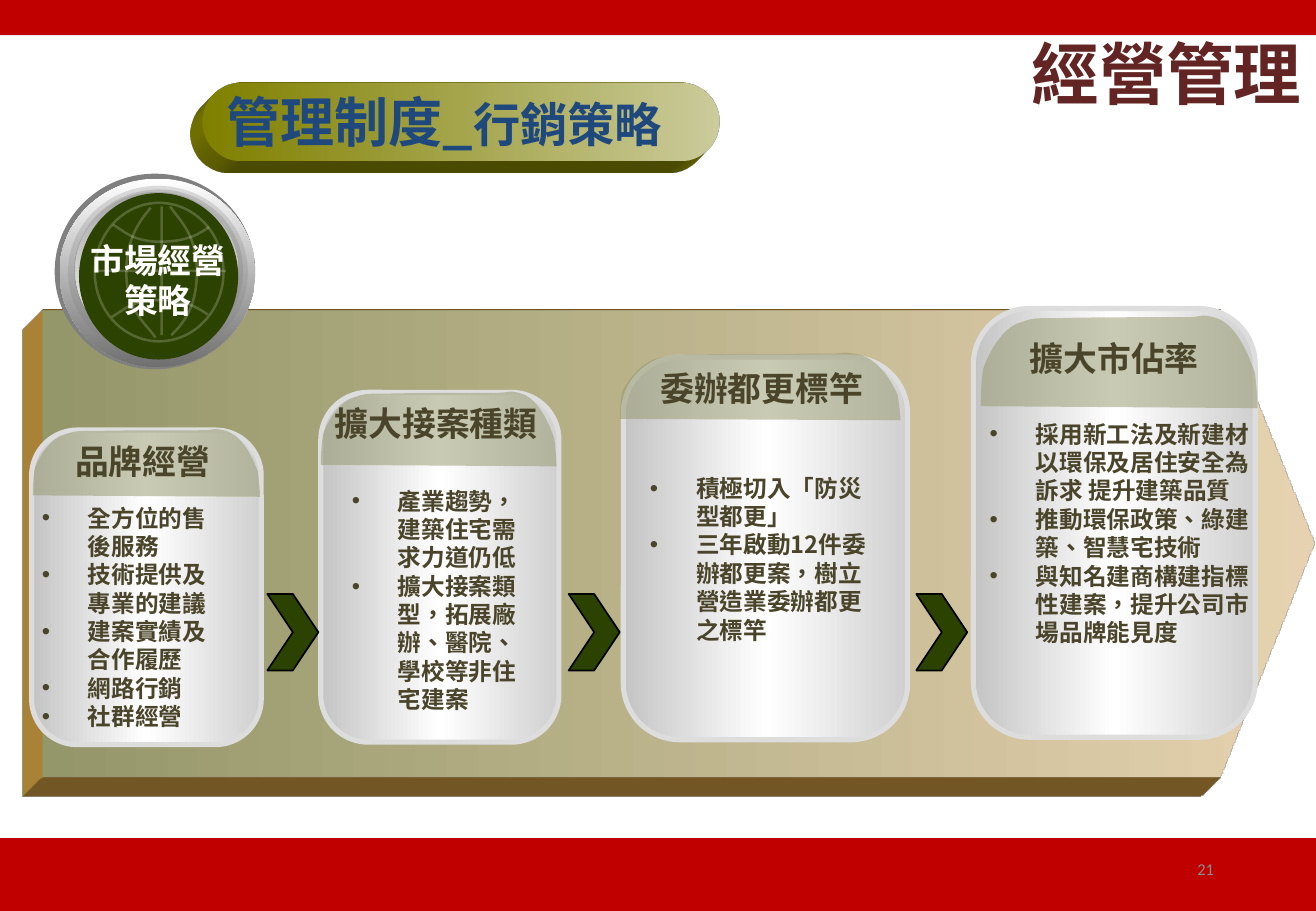
from copy import deepcopy

from lxml.etree import SubElement
from pptx import Presentation
from pptx.dml.color import RGBColor as RGB
from pptx.enum.shapes import MSO_CONNECTOR as LINE, MSO_SHAPE as SHAPE
from pptx.enum.text import MSO_ANCHOR as ANCHOR, MSO_AUTO_SIZE as SIZE, PP_ALIGN as ALIGN
from pptx.oxml.ns import qn
from pptx.util import Inches, Pt

RED = RGB(0xC0, 0x00, 0x00)
MAROON = RGB(0x63, 0x25, 0x23)
BLUE = RGB(0x1F, 0x49, 0x7D)
BROWN = RGB(0x4A, 0x45, 0x2A)
WHITE = RGB(0xFF, 0xFF, 0xFF)
BLACK = RGB(0x00, 0x00, 0x00)
GREEN = RGB(0x2C, 0x42, 0x00)
SAGE = RGB(0x94, 0x97, 0x69)
SAND = RGB(0xE6, 0xD2, 0xB0)
GOLD = RGB(0xC1, 0x93, 0x3F)
OLIVE = RGB(0x80, 0x80, 0x00)
PALE = RGB(0xCC, 0xCC, 0x9C)
GRAY = RGB(0x80, 0x80, 0x80)
MID = RGB(0x70, 0x70, 0x70)
ASH = RGB(0xA4, 0xA4, 0xA4)
STEEL = RGB(0xC4, 0xC4, 0xC4)
SILVER = RGB(0xD0, 0xD0, 0xD0)
EDGE = RGB(0xDD, 0xDD, 0xDD)
NUMBER = RGB(0x8C, 0x8C, 0x8C)
FONT = "Noto Sans CJK SC"

# Tab outline as fractions of its box: a start, then cubic curves
TAB = [(0, .98),
       (0, .98), (0, .74), (.01, .58), (.03, .41), (.08, .15), (.14, .1),
       (.19, .05), (.18, .05), (.28, .05), (.38, .04), (.64, .04), (.73, .04),
       (.82, .04), (.78, 0), (.84, .04), (.9, .08), (.95, .28), (.99, .63),
       (1, .87), (1, 1), (1, 1)]

# Globe arcs, from the corner of the badge
ARCS = [[(.95, .27), (1.02, .38), (1.17, .49), (1.17, .81), (1.17, 1.12), (1.04, 1.25), (.96, 1.33)],
        [(.79, .28), (.73, .36), (.59, .5), (.59, .81), (.59, 1.13), (.74, 1.22), (.83, 1.35)],
        [(1.26, 1.16), (1.2, 1.12), (1.1, 1.04), (.86, 1.04), (.63, 1.04), (.56, 1.13), (.47, 1.18)],
        [(1.27, .44), (1.21, .48), (1.11, .56), (.87, .56), (.64, .56), (.57, .47), (.48, .42)]]

# Card box, tab box, heading box, list box, heading, list
CARDS = [
    ((.26, 3.54, 1.89, 2.59), (.27, 3.52, 1.87, .57), (.27, 3.58, 1.81, .47),
     (.14, 3.99, 1.81, 2.42), "品牌經營",
     ["全方位的售後服務", "技術提供及專業的建議", "建案實績及合作履歷", "網路行銷", "社群經營"]),
    ((2.64, 3.23, 1.96, 2.88), (2.64, 3.21, 1.94, .63), (2.65, 3.27, 1.88, .46),
     (2.69, 3.85, 1.84, 2.14), "擴大接案種類",
     ["產業趨勢，建築住宅需求力道仍低", "擴大接案類型，拓展廠辦、醫院、學校等非住宅建案"]),
    ((5.13, 2.94, 2.34, 3.15), (5.1, 2.89, 2.31, .57), (5.15, 2.98, 2.24, .47),
     (5.16, 3.76, 2.31, 1.55), "委辦都更標竿",
     ["積極切入「防災型都更」", "三年啟動12件委辦都更案，樹立營造業委辦都更之標竿"]),
    ((8.01, 2.54, 2.32, 3.53), (8.07, 2.58, 2.28, .78), (8.06, 2.73, 2.22, .65),
     (7.89, 3.25, 2.67, 3.17), "擴大市佔率",
     ["採用新工法及新建材 以環保及居住安全為訴求 提升建築品質",
      "推動環保政策、綠建築、智慧宅技術",
      "與知名建商構建指標性建案，提升公司市場品牌能見度"]),
]


def fade(node, alpha):
    color = node.find(qn("a:solidFill")).find(qn("a:srgbClr"))
    SubElement(color, qn("a:alpha")).set("val", str(alpha * 1000))


def paint(shape, fill=None, line=None, width=1, alpha=100, down=False):
    """Fill with one colour, or with a list of colours as an even gradient."""
    shape.shadow.inherit = False
    props = shape._element.spPr
    if fill is None:
        shape.fill.background()
    elif isinstance(fill, list):
        shape.fill.gradient()
        shape.fill.gradient_angle = 270 if down else 0
        stops = props.find(qn("a:gradFill")).find(qn("a:gsLst"))
        for _ in fill[2:]:
            stops.append(deepcopy(stops[0]))
        for i, stop in enumerate(shape.fill.gradient_stops):
            stop.color.rgb = fill[i]
            stop.position = i / (len(fill) - 1)
    else:
        shape.fill.solid()
        shape.fill.fore_color.rgb = fill
        if alpha < 100:
            fade(props, alpha)
    if line is None:
        shape.line.fill.background()
    else:
        shape.line.color.rgb = line
        shape.line.width = Pt(width)
    return shape


def add(part, kind, box, fill=None, adj=None, **look):
    shape = part.shapes.add_shape(kind, *map(Inches, box))
    if adj is not None:
        shape.adjustments[0] = adj
    return paint(shape, fill, **look)


def raise_up(shape, deep, color):
    """Give the shape sides that run down to the left."""
    props = shape._element.spPr
    scene = SubElement(props, qn("a:scene3d"))
    SubElement(scene, qn("a:camera")).set("prst", "legacyObliqueBottomLeft")
    light = SubElement(scene, qn("a:lightRig"))
    light.set("rig", "legacyFlat3")
    light.set("dir", "t")
    solid = SubElement(props, qn("a:sp3d"))
    solid.set("extrusionH", str(Inches(deep)))
    solid.set("prstMaterial", "legacyMatte")
    side = SubElement(solid, qn("a:extrusionClr"))
    SubElement(side, qn("a:srgbClr")).set("val", str(color))


def curve(part, points, close=False):
    """Draw a start and cubic curves as one outline."""
    spots = [(Inches(x), Inches(y)) for x, y in points]
    pen = part.shapes.build_freeform(*spots[0])
    pen.add_line_segments(spots[1:], close=close)
    shape = pen.convert_to_shape()
    steps = list(shape._element.iter(qn("a:lnTo")))
    for i in range(0, len(points) - 1, 3):
        bend = steps[i].makeelement(qn("a:cubicBezTo"))
        steps[i].addprevious(bend)
        for step in steps[i:i + 3]:
            bend.append(step[0])
            step.getparent().remove(step)
    return shape


def write(shape, lines, size, color, align=ALIGN.CENTER, anchor=ANCHOR.MIDDLE,
          bold=True, font=FONT, bullet=False, wrap=True, lead=1.2):
    frame = shape.text_frame
    frame.text = "\n".join(lines)
    frame.word_wrap = wrap
    frame.auto_size = SIZE.NONE
    frame.vertical_anchor = anchor
    for para in frame.paragraphs:
        para.alignment = align
        para.line_spacing = Pt(round(size * lead, 1))
        if bullet:
            props = para._p.get_or_add_pPr()
            props.set("marL", str(Inches(.38)))
            props.set("indent", str(-Inches(.38)))
            SubElement(props, qn("a:buFont")).set("typeface", "Arial")
            SubElement(props, qn("a:buChar")).set("char", "•")
        for run in para.runs:
            run.font.size, run.font.bold, run.font.name = Pt(size), bold, font
            run.font.color.rgb = color
            props = run._r.get_or_add_rPr()
            props.set("lang", "zh-TW")
            SubElement(props, qn("a:ea")).set("typeface", font)


def label(part, box, lines, size, color, **look):
    write(part.shapes.add_textbox(*map(Inches, box)), lines, size, color, **look)


def frame(slide):
    # Bands, title and page number
    add(slide, SHAPE.RECTANGLE, (0, 6.9, 10.83, .6), RED)
    add(slide, SHAPE.RECTANGLE, (0, 0, 10.83, .29), RED)
    title = slide.shapes.title
    title.left, title.top, title.width, title.height = map(Inches, (1.67, .29, 9.14, .71))
    write(title, ["經營管理"], 40, MAROON, align=ALIGN.RIGHT, lead=1.02)
    label(slide, (7.65, 6.95, 2.44, .4), ["21"], 9.8, NUMBER,
          align=ALIGN.RIGHT, bold=False, font="Calibri")


def arrow(slide, box):
    face = add(slide, SHAPE.PENTAGON, box, [SAGE, SAND], .202)
    raise_up(face, .47, GOLD)


def pill(slide, box):
    # Section heading on a raised pill
    face = add(slide, SHAPE.ROUNDED_RECTANGLE, box, [OLIVE, PALE], .5)
    raise_up(face, .28, OLIVE)
    write(face, ["管理制度_"], 32, BLUE, align=ALIGN.LEFT, wrap=False)
    para = face.text_frame.paragraphs[0]
    para._p.append(deepcopy(para.runs[0]._r))
    para.runs[1].text = "行銷策略"
    para.runs[1].font.size = Pt(28)


def badge(slide, x, y):
    part = slide.shapes.add_group_shape()
    # Metal rings
    rings = [((0, 0, 1.65, 1.61), GRAY, 100), ((.04, .04, 1.61, 1.55), [WHITE, MID], 100),
             ((.11, .1, 1.48, 1.42), GRAY, 25), ((.16, .13, 1.39, 1.33), GRAY, 30),
             ((.17, .15, 1.34, 1.29), [ASH, WHITE], 100), ((.2, .16, 1.31, 1.37), GREEN, 100)]
    for (dx, dy, w, h), fill, alpha in rings:
        add(part, SHAPE.OVAL, (x + dx, y + dy, w, h), fill, alpha=alpha, down=True)
    # Globe lines
    wires = [add(part, SHAPE.OVAL, (x + .33, y + .24, 1.06, 1.14))]
    for ends in [(.88, .27, .88, 1.33), (.35, .8, 1.41, .8)]:
        spots = [Inches(v + (x, y)[i % 2]) for i, v in enumerate(ends)]
        wire = part.shapes.add_connector(LINE.STRAIGHT, *spots)
        SubElement(wire._element.spPr, qn("a:effectLst"))
        wires.append(wire)
    for arc in ARCS:
        wires.append(paint(curve(part, [(x + px, y + py) for px, py in arc])))
    for wire in wires:
        wire.line.color.rgb = WHITE
        wire.line.width = Pt(1.5)
        fade(wire._element.spPr.find(qn("a:ln")), 20)
    label(part, (x + .19, y + .49, 1.32, .77), ["市場經營", "策略"], 20, WHITE)


def card(slide, box, tab, head, body, name, items):
    part = slide.shapes.add_group_shape()
    add(part, SHAPE.ROUNDED_RECTANGLE, box, [STEEL, WHITE, SILVER], .199, line=EDGE, width=3)
    x, y, w, h = tab
    top = [(x + px * w, y + py * h) for px, py in TAB]
    paint(curve(part, top, close=True), SAGE, alpha=50)
    label(part, head, [name], 20, BROWN, anchor=ANCHOR.TOP)
    area = add(part, SHAPE.ROUNDED_RECTANGLE, body, adj=.199)
    write(area, items, 14, BROWN, align=ALIGN.LEFT, anchor=ANCHOR.TOP, bullet=True)


def main():
    deck = Presentation()
    deck.slide_width, deck.slide_height = Inches(10.83), Inches(7.5)
    slide = deck.slides.add_slide(deck.slide_layouts[5])
    frame(slide)
    arrow(slide, (.35, 2.55, 10.48, 3.85))
    pill(slide, (1.67, .68, 4.25, .64))
    badge(slide, .45, 1.43)
    for parts in CARDS:
        card(slide, *parts)
    # Steps between the cards
    for x in (2.2, 4.68, 7.54):
        add(slide, SHAPE.CHEVRON, (x, 4.89, .42, .63), GREEN, line=BLACK)
    deck.save("out.pptx")


if __name__ == "__main__":
    main()
